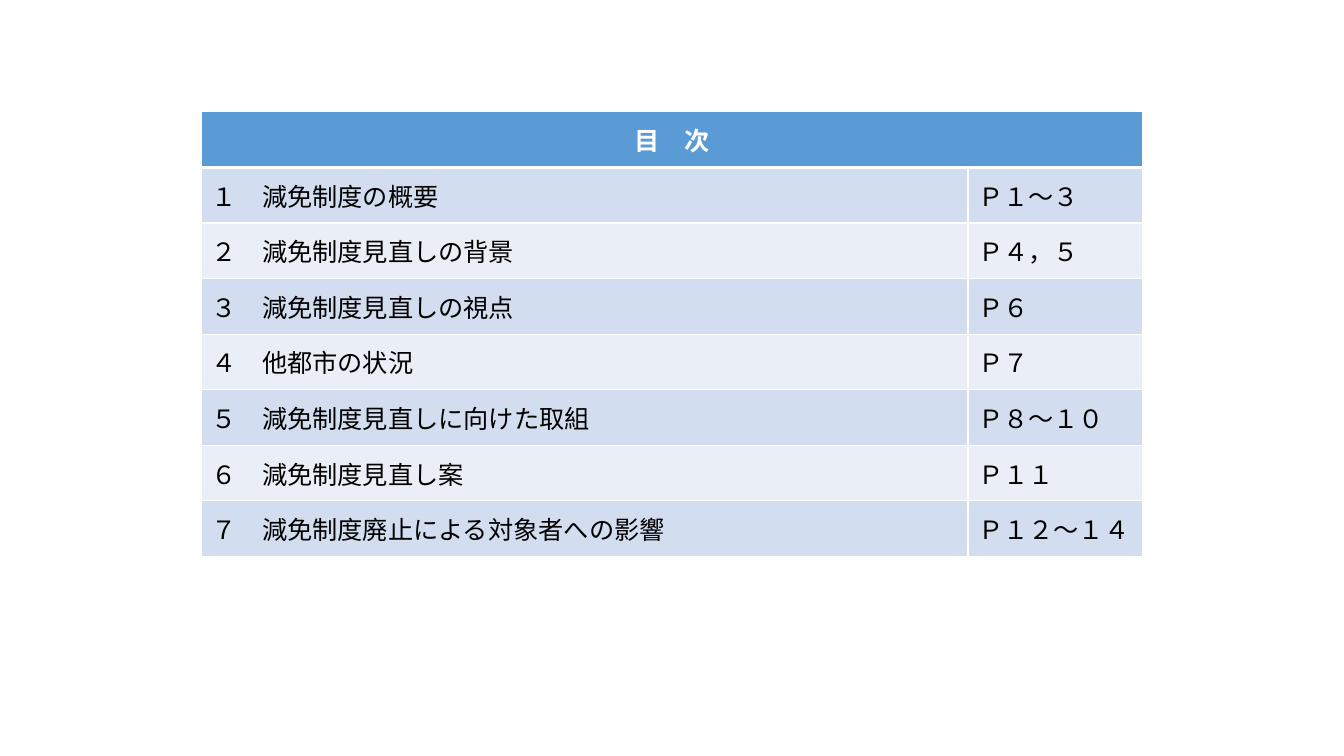
import pptx
import pptx.dml.color
import pptx.enum.text
import pptx.oxml
import pptx.oxml.ns
import pptx.util

WHITE = pptx.dml.color.RGBColor(0xFF, 0xFF, 0xFF)
BLACK = pptx.dml.color.RGBColor(0x00, 0x00, 0x00)
HEADER_BLUE = pptx.dml.color.RGBColor(0x5B, 0x9B, 0xD5)
BAND_COLORS = (
    pptx.dml.color.RGBColor(0xD2, 0xDE, 0xEF),
    pptx.dml.color.RGBColor(0xEA, 0xEF, 0xF7),
)

TITLE = "目　次"
CONTENTS = [
    ("１　減免制度の概要", "Ｐ１～３"),
    ("２　減免制度見直しの背景", "Ｐ４，５"),
    ("３　減免制度見直しの視点", "Ｐ６"),
    ("４　他都市の状況", "Ｐ７"),
    ("５　減免制度見直しに向けた取組", "Ｐ８～１０"),
    ("６　減免制度見直し案", "Ｐ１１"),
    ("７　減免制度廃止による対象者への影響", "Ｐ１２～１４"),
]


def write_text(cell, text, size=18, color=BLACK, bold=False,
               align=pptx.enum.text.PP_ALIGN.LEFT):
    """Write one formatted, vertically centred line into a cell."""
    cell.vertical_anchor = pptx.enum.text.MSO_ANCHOR.MIDDLE
    paragraph = cell.text_frame.paragraphs[0]
    paragraph.alignment = align
    run = paragraph.add_run()
    run.text = text
    run.font.name = "Calibri"
    run.font.size = pptx.util.Pt(size)
    run.font.bold = bold
    run.font.color.rgb = color


def paint_cell(cell, color, top=1, bottom=1):
    """Give a cell white borders, in points, and a solid fill."""
    properties = cell._tc.get_or_add_tcPr()
    for side, width in (("L", 1), ("R", 1), ("T", top), ("B", bottom)):
        properties.append(pptx.oxml.parse_xml(
            f'<a:ln{side} {pptx.oxml.ns.nsdecls("a")} w="{pptx.util.Pt(width)}">'
            f'<a:solidFill><a:srgbClr val="{WHITE}"/></a:solidFill></a:ln{side}>'))
    cell.fill.solid()
    cell.fill.fore_color.rgb = color


def add_contents_table(slide, left, top, width, height):
    """Place the table of contents in the given box."""
    row_count = len(CONTENTS) + 1
    table = slide.shapes.add_table(row_count, 2, left, top, width, height).table
    page_width = pptx.util.Inches(1.73)
    table.columns[0].width = width - page_width
    table.columns[1].width = page_width
    for row in table.rows:
        row.height = height // row_count

    header = table.cell(0, 0)
    header.merge(table.cell(0, 1))
    write_text(header, TITLE, color=WHITE, bold=True,
               align=pptx.enum.text.PP_ALIGN.CENTER)
    for column in range(2):
        paint_cell(table.cell(0, column), HEADER_BLUE, bottom=3)

    for index, entry in enumerate(CONTENTS):
        for column, text in enumerate(entry):
            cell = table.cell(index + 1, column)
            write_text(cell, text)
            paint_cell(cell, BAND_COLORS[index % 2], top=3 if index == 0 else 1)


def main():
    """Build the contents slide and save it."""
    presentation = pptx.Presentation()
    presentation.slide_width = pptx.util.Inches(13.33)
    presentation.slide_height = pptx.util.Inches(7.5)
    slide = presentation.slides.add_slide(presentation.slide_layouts[6])
    width = int(presentation.slide_width * 0.7)
    left = (presentation.slide_width - width) // 2
    add_contents_table(slide, left, pptx.util.Inches(1.11),
                       width, pptx.util.Inches(4.41))
    presentation.save("out.pptx")


if __name__ == "__main__":
    main()
